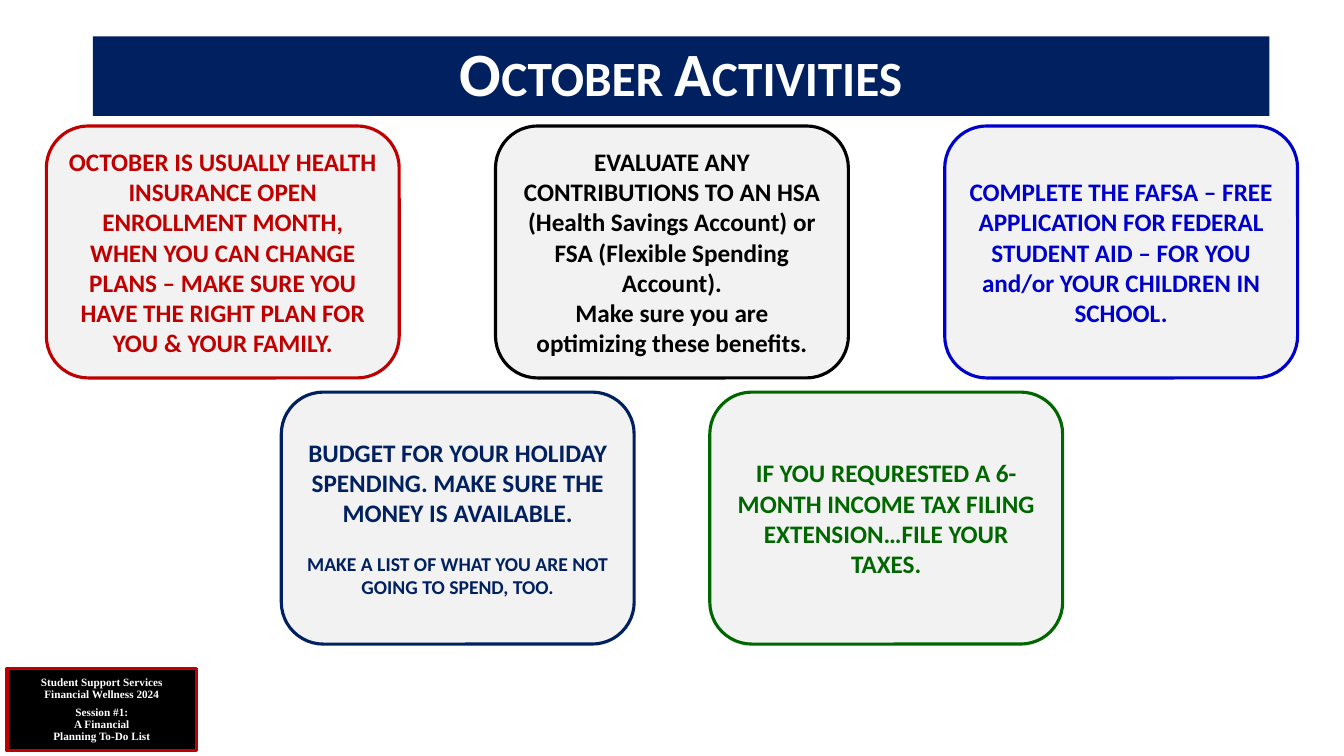
from pptx import Presentation
from pptx.dml.color import RGBColor
from pptx.enum.shapes import MSO_SHAPE as Shape
from pptx.enum.text import MSO_ANCHOR as Anchor, MSO_AUTO_SIZE as AutoSize, PP_ALIGN as Align
from pptx.util import Inches, Pt

CARD_WIDTH, CARD_HEIGHT = 3.5, 2.5
ROW_TOP, ROW_STEP = 1.25, 2.64
NAVY, RED, BLACK, WHITE = "002060", "C00000", "000000", "FFFFFF"

CARD_ROWS = [
    (0.46, 4.455, [
        (RED, [("OCTOBER IS USUALLY HEALTH INSURANCE OPEN ENROLLMENT MONTH, "
                "WHEN YOU CAN CHANGE PLANS – MAKE SURE YOU HAVE THE RIGHT PLAN "
                "FOR YOU & YOUR FAMILY.", 18, 0)]),
        (BLACK, [("EVALUATE ANY CONTRIBUTIONS TO AN HSA (Health Savings Account) "
                  "or FSA (Flexible Spending Account).", 18, 0),
                 ("Make sure you are optimizing these benefits.", 18, 0)]),
        ("0000CC", [("COMPLETE THE FAFSA – FREE APPLICATION FOR FEDERAL STUDENT AID – "
                     "FOR YOU and/or YOUR CHILDREN IN SCHOOL.", 18, 0)]),
    ]),
    (2.79, 4.25, [
        (NAVY, [("BUDGET FOR YOUR HOLIDAY SPENDING. MAKE SURE THE MONEY IS AVAILABLE.", 18, 0),
                ("MAKE A LIST OF WHAT YOU ARE NOT GOING TO SPEND, TOO.", 14, 17)]),
        ("006600", [("IF YOU REQURESTED A 6-MONTH INCOME TAX FILING "
                     "EXTENSION…FILE YOUR TAXES.", 18, 0)]),
    ]),
]

SESSION_LABEL = [
    ("Student Support Services", 8, 0),
    ("Financial Wellness 2024", 8, 0),
    ("Session #1:\nA Financial\nPlanning To-Do List", 8, 4),
]


def color(value):
    return RGBColor.from_string(value)


def paint(shape, fill):
    shape.fill.solid()
    shape.fill.fore_color.rgb = color(fill)


def add_span(para, text, size, ink, font):
    span = para.add_run()
    span.text = text
    span.font.name = font
    span.font.size = Pt(size)
    span.font.bold = True
    span.font.color.rgb = color(ink)
    return span


def write(frame, paragraphs, ink, font="Calibri", spacing=1.0):
    frame.word_wrap = True
    frame.vertical_anchor = Anchor.MIDDLE
    for index, (text, size, before) in enumerate(paragraphs):
        para = frame.add_paragraph() if index else frame.paragraphs[0]
        para.alignment = Align.CENTER
        para.line_spacing = spacing
        para.space_before = Pt(before)
        for number, line in enumerate(text.split("\n")):
            if number:
                para.add_line_break()
            add_span(para, line, size, ink, font)


def add_panel(page, kind, left, top, width, height, fill, border):
    box = page.shapes.add_shape(kind, Inches(left), Inches(top), Inches(width), Inches(height))
    box.shadow.inherit = False
    paint(box, fill)
    box.line.color.rgb = color(border)
    box.line.width = Pt(2.25)
    return box


def add_title(page, text):
    title = page.shapes.title
    title.left, title.top = Inches(0.92), Inches(0.36)
    title.width, title.height = Inches(11.67), Inches(0.79)
    paint(title, NAVY)
    write(title.text_frame, [(text, 44, 0)], WHITE, spacing=0.9)
    title.text_frame.auto_size = AutoSize.NONE
    span = title.text_frame.paragraphs[0].runs[0]
    span._r.get_or_add_rPr().set("cap", "small")


def add_cards(page):
    for row, (start, step, cards) in enumerate(CARD_ROWS):
        for column, (ink, paragraphs) in enumerate(cards):
            card = add_panel(page, Shape.ROUNDED_RECTANGLE, start + column * step,
                             ROW_TOP + row * ROW_STEP, CARD_WIDTH, CARD_HEIGHT, "F2F2F2", ink)
            write(card.text_frame, paragraphs, ink)


def add_session_label(page):
    label = add_panel(page, Shape.RECTANGLE, 0.07, 6.63, 1.88, 0.82, BLACK, RED)
    write(label.text_frame, SESSION_LABEL, WHITE, "Times New Roman", 0.9)


def main():
    deck = Presentation()
    deck.slide_width, deck.slide_height = Inches(13.33), Inches(7.5)
    page = deck.slides.add_slide(deck.slide_layouts[5])
    add_title(page, "October Activities")
    add_cards(page)
    add_session_label(page)
    deck.save("out.pptx")


if __name__ == "__main__":
    main()
